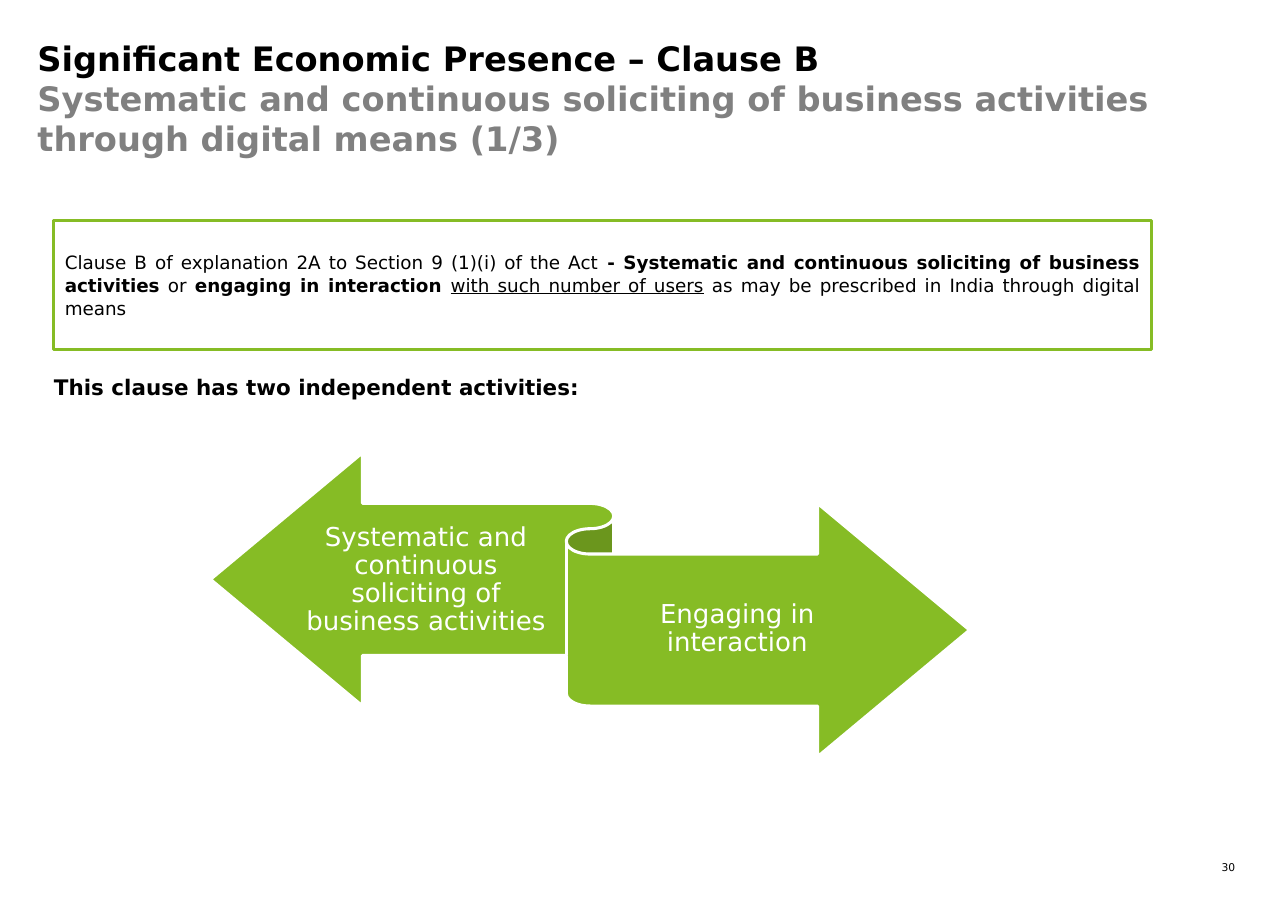
import pptx
import pptx.util
import pptx.dml.color
import pptx.enum.shapes
import pptx.enum.text
from dataclasses import dataclass

Pt = pptx.util.Pt
Inches = pptx.util.Inches
Align = pptx.enum.text.PP_ALIGN
Anchor = pptx.enum.text.MSO_ANCHOR
Shape = pptx.enum.shapes.MSO_SHAPE


@dataclass(frozen=True)
class Theme:
    font: str = "DejaVu Sans"
    black: str = "000000"
    white: str = "FFFFFF"
    grey: str = "808080"
    green: str = "86BC25"
    title: int = 22
    arrow: int = 17
    lead: int = 14
    body: int = 12
    number: int = 7
    line: int = 2


THEME = Theme()


def color(code):
    return pptx.dml.color.RGBColor.from_string(code)


def part(box, left, top, width, height):
    """Return the box at the given percentages of an outer box."""
    x, y, w, h = box
    return (int(x + w * left / 100), int(y + h * top / 100),
            int(w * width / 100), int(h * height / 100))


def style(run, size, code, bold=False, under=False):
    font = run.font
    font.name, font.size = THEME.font, Pt(size)
    font.bold, font.underline = bold, under
    font.color.rgb = color(code)


def frame(shape, anchor=Anchor.TOP, side=0, edge=0):
    """Set wrapping, anchor and margins in inches; return the text frame."""
    text = shape.text_frame
    text.word_wrap = True
    text.auto_size = pptx.enum.text.MSO_AUTO_SIZE.NONE
    text.vertical_anchor = anchor
    text.margin_left = text.margin_right = Inches(side)
    text.margin_top = text.margin_bottom = Inches(edge)
    return text


def label(slide, box, words, size, code=THEME.black, bold=False,
          align=Align.LEFT, anchor=Anchor.TOP, edge=0, space=1.0):
    text = frame(slide.shapes.add_textbox(*box), anchor, edge=edge)
    text.text = words
    line = text.paragraphs[0]
    line.alignment, line.line_spacing = align, space
    style(line.runs[0], size, code, bold)


def panel(slide, kind, box, fill, edge):
    shape = slide.shapes.add_shape(kind, *box)
    shape.shadow.inherit = False
    shape.fill.solid()
    shape.fill.fore_color.rgb = color(fill)
    shape.line.color.rgb = color(edge)
    shape.line.width = Pt(THEME.line)
    return shape


def heading(slide, box):
    title = slide.shapes.title
    title.left, title.top, title.width, title.height = box
    text = frame(title)
    text.text = ("Significant Economic Presence – Clause B\n"
                 "Systematic and continuous soliciting of business activities "
                 "through digital means (1/3)")
    for line, code in zip(text.paragraphs, (THEME.black, THEME.grey)):
        line.alignment = Align.LEFT
        style(line.runs[0], THEME.title, code, bold=True)


def clause(slide, box):
    shape = panel(slide, Shape.RECTANGLE, box, THEME.white, THEME.green)
    line = frame(shape, Anchor.MIDDLE, 0.1, 0.1).paragraphs[0]
    line.alignment, line.line_spacing = Align.JUSTIFY, 1.06
    for words, bold, under in (
        ("Clause B of explanation 2A to Section 9 (1)(i) of the Act", False, False),
        (" - Systematic and continuous soliciting of business activities", True, False),
        (" or ", False, False),
        ("engaging in interaction ", True, False),
        ("with such number of users", False, True),
        (" as may be prescribed in India through digital means", False, False),
    ):
        run = line.add_run()
        run.text = words
        style(run, THEME.body, THEME.black, bold, under)


def ribbon(slide, box):
    """Draw the two-way ribbon with one activity on each arrow."""
    panel(slide, Shape.LEFT_RIGHT_RIBBON, box, THEME.green, THEME.white)
    for words, left, top, width in (
        ("Systematic and continuous soliciting of business activities", 11.9, 17.4, 33),
        ("Engaging in interaction", 49.9, 33.4, 39),
    ):
        label(slide, part(box, left, top, width, 49), words, THEME.arrow,
              THEME.white, align=Align.CENTER, anchor=Anchor.MIDDLE,
              edge=0.07, space=0.9)


def main():
    deck = pptx.Presentation()
    deck.slide_width, deck.slide_height = Inches(11.69), Inches(8.27)
    page = (0, 0, deck.slide_width, deck.slide_height)
    slide = deck.slides.add_slide(deck.slide_layouts.get_by_name("Title Only"))
    heading(slide, part(page, 2.91, 4.11, 93.24, 9.55))
    clause(slide, part(page, 4.19, 24.18, 85.2, 14.15))
    label(slide, part(page, 4.19, 41.11, 80.84, 6.77),
          "This clause has two independent activities:", THEME.lead, bold=True)
    ribbon(slide, part(page, 16.34, 49.7, 58.94, 33.37))
    label(slide, part(page, 93.33, 94.44, 2.57, 1.45), "30", THEME.number,
          align=Align.RIGHT)
    deck.save("out.pptx")


if __name__ == "__main__":
    main()
